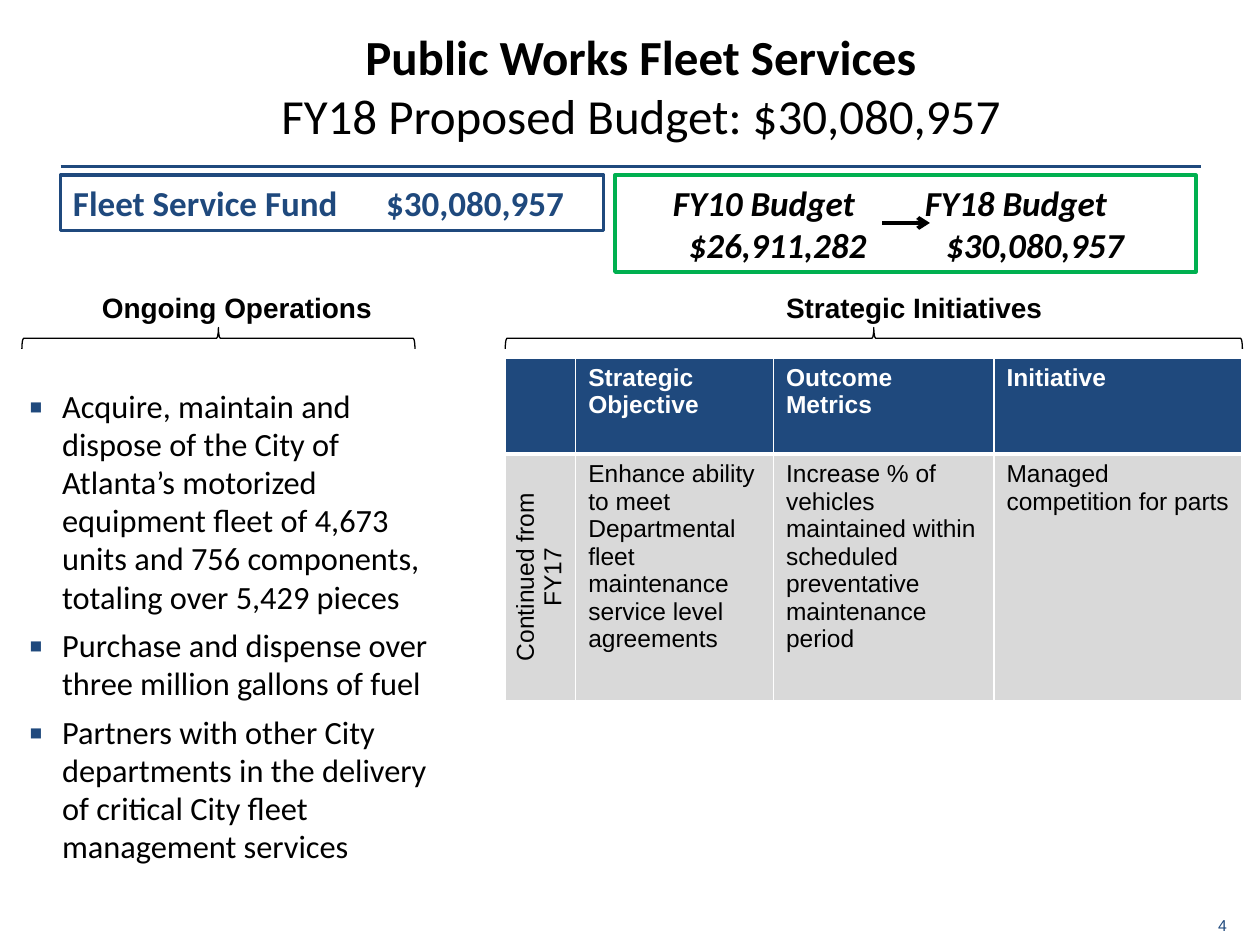
from lxml import etree
from pptx import Presentation
from pptx.dml.color import RGBColor
from pptx.enum.shapes import MSO_CONNECTOR, MSO_SHAPE
from pptx.enum.text import MSO_ANCHOR, PP_ALIGN
from pptx.oxml.ns import qn
from pptx.util import Pt

NAVY = RGBColor(0x1F, 0x49, 0x7D)
GREEN = RGBColor(0x00, 0xB0, 0x50)
GRAY = RGBColor(0xD9, 0xD9, 0xD9)
BLACK = RGBColor(0, 0, 0)
WHITE = RGBColor(0xFF, 0xFF, 0xFF)
LEFT, CENTER = PP_ALIGN.LEFT, PP_ALIGN.CENTER
TOP, MIDDLE = MSO_ANCHOR.TOP, MSO_ANCHOR.MIDDLE
LINE = MSO_CONNECTOR.STRAIGHT
RECT, BRACE = MSO_SHAPE.RECTANGLE, MSO_SHAPE.LEFT_BRACE

OPERATIONS = [
    "Acquire, maintain and dispose of the City of Atlanta’s motorized "
    "equipment fleet of 4,673 units and 756 components, totaling over 5,429 pieces",
    "Purchase and dispense over three million gallons of fuel",
    "Partners with other City departments in the delivery of critical City "
    "fleet management services",
]
INITIATIVES = [
    ["", "Strategic Objective", "Outcome Metrics", "Initiative"],
    ["Continued from FY17",
     "Enhance ability to meet Departmental fleet maintenance service level agreements",
     "Increase % of vehicles maintained within scheduled preventative maintenance period",
     "Managed competition for parts"],
]


def write(p, text, font="Arial", size=14, color=BLACK, bold=False, italic=False,
          align=LEFT, before=0, spacing=None, bullet=False, tabs=()):
    pPr = p._p.get_or_add_pPr()
    p.alignment = align
    p.space_before = Pt(before)
    if spacing:
        p.line_spacing = spacing
    if bullet:
        pPr.set("marL", str(Pt(19)))
        pPr.set("indent", str(-Pt(19)))
        clr = etree.SubElement(pPr, qn("a:buClr"))
        etree.SubElement(clr, qn("a:srgbClr"), val=str(NAVY))
        etree.SubElement(pPr, qn("a:buSzPct"), val="125000")
        etree.SubElement(pPr, qn("a:buFont"), typeface="Arial")
        etree.SubElement(pPr, qn("a:buChar"), char="▪")
    if tabs:
        lst = etree.SubElement(pPr, qn("a:tabLst"))
        for pos in tabs:
            etree.SubElement(lst, qn("a:tab"), pos=str(Pt(pos)), algn="l")
    r = p.add_run()
    r.text = text
    f = r.font
    f.name, f.size, f.bold, f.italic = font, Pt(size), bold, italic
    f.color.rgb = color


def add_text(s, x, y, w, h, anchor=TOP, wrap=True):
    tf = s.shapes.add_textbox(Pt(x), Pt(y), Pt(w), Pt(h)).text_frame
    tf.word_wrap = wrap
    tf.vertical_anchor = anchor
    return tf


def add_outline(s, shape, x, y, w, h, color, width):
    sp = s.shapes.add_shape(shape, Pt(x), Pt(y), Pt(w), Pt(h))
    sp.shadow.inherit = False
    sp.fill.background()
    sp.line.color.rgb = color
    sp.line.width = Pt(width)
    tf = sp.text_frame
    tf.word_wrap = True
    tf.vertical_anchor = TOP
    return sp


def add_line(s, x1, x2, y, color, width, arrow=False):
    c = s.shapes.add_connector(LINE, Pt(x1), Pt(y), Pt(x2), Pt(y))
    c.line.color.rgb = color
    c.line.width = Pt(width)
    if arrow:
        etree.SubElement(c.line._get_or_add_ln(), qn("a:tailEnd"), type="arrow")
    etree.SubElement(c._element.spPr, qn("a:effectLst"))


def add_section(s, text, x, w, brace_x, brace_w):
    tf = add_text(s, x, 162.7, w, 26.6)
    write(tf.paragraphs[0], text, size=16, bold=True, align=CENTER)
    thick, mid_y = 12.2, 193.3
    sp = add_outline(s, BRACE, brace_x + (brace_w - thick) / 2, mid_y - brace_w / 2,
                     thick, brace_w, BLACK, 0.75)
    sp.rotation = 90


def set_borders(cell, **widths):
    tcPr = cell._tc.get_or_add_tcPr()
    for i, side in enumerate(("lnL", "lnR", "lnT", "lnB")):
        ln = etree.Element(qn("a:" + side), w=str(Pt(widths.get(side, 1))))
        fill = etree.SubElement(ln, qn("a:solidFill"))
        etree.SubElement(fill, qn("a:srgbClr"), val=str(WHITE))
        tcPr.insert(i, ln)


def add_initiatives(s, x, y, col_widths, row_heights):
    t = s.shapes.add_table(len(row_heights), len(col_widths), Pt(x), Pt(y),
                           Pt(sum(col_widths)), Pt(sum(row_heights))).table
    t.horz_banding = False
    for col, w in zip(t.columns, col_widths):
        col.width = Pt(w)
    for i, (row, h) in enumerate(zip(t.rows, row_heights)):
        row.height = Pt(h)
        head = i == 0
        for j, cell in enumerate(row.cells):
            cell.fill.solid()
            cell.fill.fore_color.rgb = NAVY if head else GRAY
            side_label = j == 0 and not head
            if INITIATIVES[i][j]:
                write(cell.text_frame.paragraphs[0], INITIATIVES[i][j], bold=head,
                      color=WHITE if head else BLACK,
                      align=CENTER if side_label else LEFT)
            set_borders(cell, **{"lnB" if head else "lnT": 3})
            if side_label:
                cell._tc.get_or_add_tcPr().set("vert", "vert270")


def main():
    prs = Presentation()
    prs.slide_width, prs.slide_height = Pt(720), Pt(540)
    s = prs.slides.add_slide(prs.slide_layouts[6])

    tf = add_text(s, 689, 519.8, 23.8, 17.3, wrap=False)
    write(tf.paragraphs[0], "4", size=9, color=NAVY)
    add_line(s, 34.6, 686.2, 95, NAVY, 1.5)

    tf = add_text(s, 85, 11.5, 558.7, 74.9, anchor=MIDDLE)
    tf.margin_left = Pt(10.8)
    write(tf.paragraphs[0], "Public Works Fleet Services", font="Calibri", size=28,
          bold=True, align=CENTER)
    write(tf.add_paragraph(), "FY18 Proposed Budget: $30,080,957", font="Calibri",
          size=28, align=CENTER)

    tf = add_text(s, 9.4, 218.2, 245.5, 308.2)
    for i, text in enumerate(OPERATIONS):
        p = tf.add_paragraph() if i else tf.paragraphs[0]
        write(p, text, font="Calibri", size=18.5, before=6 if i else 0,
              spacing=0.98, bullet=True)

    add_section(s, "Ongoing Operations", 9.4, 252, 12.5, 224.6)
    add_section(s, "Strategic Initiatives", 385.9, 272.9, 288.7, 421.2)
    add_initiatives(s, 288.7, 204.5, [40.3, 113, 126, 141.9], [55, 140])

    tf = add_outline(s, RECT, 351.4, 100.1, 331.9, 55.4, GREEN, 2).text_frame
    write(tf.paragraphs[0], "\tFY10 Budget\tFY18 Budget", font="Calibri", size=20,
          bold=True, italic=True, tabs=(26, 170))
    write(tf.add_paragraph(), "\t$26,911,282\t$30,080,957", font="Calibri", size=20,
          bold=True, italic=True, tabs=(35, 182))

    tf = add_outline(s, RECT, 34.6, 100.1, 310.3, 31.7, NAVY, 2).text_frame
    write(tf.paragraphs[0], "Fleet Service Fund\t$30,080,957", font="Calibri", size=20,
          color=NAVY, bold=True, tabs=(179,))
    add_line(s, 504, 531.4, 127.4, BLACK, 2.25, arrow=True)

    prs.save("out.pptx")


if __name__ == "__main__":
    main()
